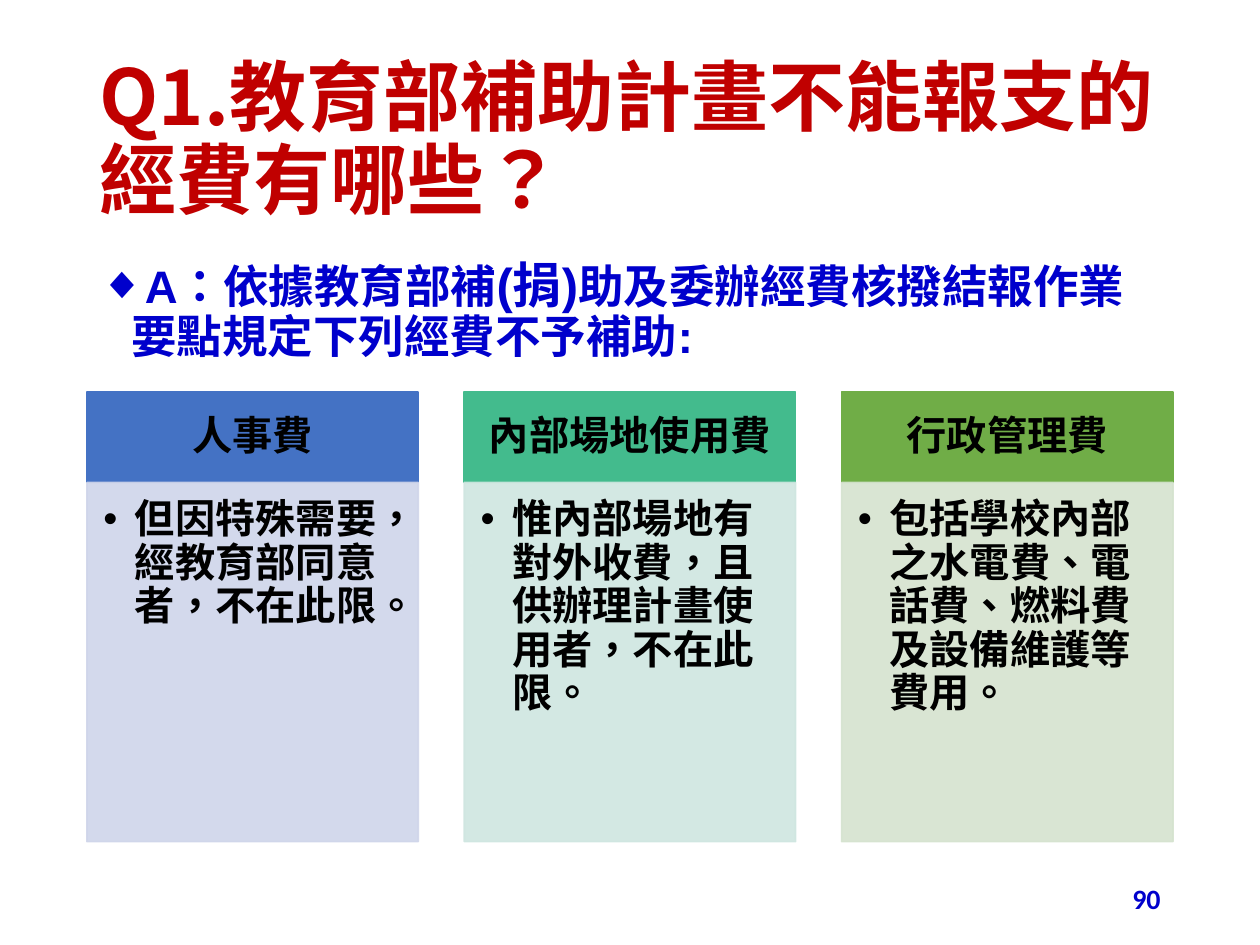
from lxml.etree import SubElement
from pptx import Presentation
from pptx.dml.color import RGBColor
from pptx.enum.lang import MSO_LANGUAGE_ID as Language
from pptx.enum.shapes import MSO_SHAPE as Shape
from pptx.enum.text import MSO_ANCHOR as Anchor, MSO_AUTO_SIZE as AutoSize, PP_ALIGN as Align
from pptx.oxml.ns import qn
from pptx.util import Inches, Pt

CJK_FONT = "Noto Sans CJK SC"
BLUE = "0000CC"
BLACK = "000000"
CARD_LEFT, CARD_WIDTH, CARD_STEP = 0.69, 2.63, 2.995
HEAD_TOP, HEAD_HEIGHT, DETAIL_HEIGHT = 3.11, 0.72, 2.85

CARDS = [
    ("人事費", "但因特殊需要，經教育部同意者，不在此限。", "4472C4", "CFD5EA"),
    ("內部場地使用費", "惟內部場地有對外收費，且供辦理計畫使用者，不在此限。", "43BB8D", "CFE6E0"),
    ("行政管理費", "包括學校內部之水電費、電話費、燃料費及設備維護等費用。", "70AD47", "D5E3CF"),
]


def color(value):
    return RGBColor.from_string(value)


def apply(target, values):
    for name, value in values.items():
        setattr(target, name, value)


def place(shape, left, top, width, height):
    apply(shape, {"left": Inches(left), "top": Inches(top),
                  "width": Inches(width), "height": Inches(height)})


def set_frame(shape, anchor, insets=(0.1, 0.05, 0.1, 0.05)):
    left, top, right, bottom = map(Inches, insets)
    apply(shape.text_frame, {
        "word_wrap": True, "auto_size": AutoSize.NONE, "vertical_anchor": anchor,
        "margin_left": left, "margin_top": top,
        "margin_right": right, "margin_bottom": bottom})


def add_bullet(para, symbol):
    properties = para._p.get_or_add_pPr()
    properties.set("marL", str(Inches(0.25)))
    properties.set("indent", str(-Inches(0.25)))
    SubElement(properties, qn("a:buFont"), typeface="Arial")
    SubElement(properties, qn("a:buChar"), char=symbol)


def write(shape, spans, font, hue, align=Align.LEFT, bullet=None):
    para = shape.text_frame.paragraphs[0]
    if bullet:
        add_bullet(para, bullet)
    apply(para, {"alignment": align, "line_spacing": 0.9, "space_before": Pt(0)})
    for text, size in spans:
        span = para.add_run()
        span.text = text
        apply(span.font, {"name": font, "size": Pt(size), "bold": True,
                          "language_id": Language.TRADITIONAL_CHINESE})
        span.font.color.rgb = color(hue)
        SubElement(span._r.get_or_add_rPr(), qn("a:ea"), typeface=CJK_FONT)


def set_opacity(fill_format, percent):
    for hue in fill_format._xPr.iter(qn("a:srgbClr")):
        SubElement(hue, qn("a:alpha"), val=str(percent * 1000))


def add_panel(page, left, top, height, hue, opacity=100):
    panel = page.shapes.add_shape(Shape.RECTANGLE, Inches(left), Inches(top),
                                  Inches(CARD_WIDTH), Inches(height))
    panel.shadow.inherit = False
    panel.line.width = Pt(1)
    for fill in (panel.fill, panel.line.fill):
        fill.solid()
        fill.fore_color.rgb = color(hue)
    if opacity < 100:
        set_opacity(panel.fill, opacity)
    return panel


def add_card(page, left, heading, detail, strong, pale):
    head = add_panel(page, left, HEAD_TOP, HEAD_HEIGHT, strong)
    set_frame(head, Anchor.MIDDLE, (0.18, 0.1, 0.18, 0.1))
    write(head, [(heading, 23)], CJK_FONT, BLACK, Align.CENTER)
    body = add_panel(page, left, HEAD_TOP + HEAD_HEIGHT, DETAIL_HEIGHT, pale, 90)
    set_frame(body, Anchor.TOP, (0.13, 0.13, 0.18, 0.2))
    write(body, [(detail, 23)], CJK_FONT, BLACK, bullet="•")


def add_title(page):
    title = page.shapes.title
    place(title, 0.69, 0.4, 8.62, 1.45)
    set_frame(title, Anchor.MIDDLE)
    write(title, [("Q1.教育部補助計畫不能報支的經費有哪些？", 44)], CJK_FONT, "C00000")


def add_answer(page):
    answer = page.placeholders[1]
    place(answer, 0.69, 2.02, 8.62, 4.76)
    set_frame(answer, Anchor.TOP)
    spans = [("A：依據教育部補", 26), ("(捐)", 28),
             ("助及委辦經費核撥結報作業要點規定下列經費不予補助:", 26)]
    write(answer, spans, "Arial", BLUE, bullet="◆")


def add_page_number(page):
    box = page.shapes.add_textbox(Inches(7.06), Inches(6.95), Inches(2.25), Inches(0.4))
    set_frame(box, Anchor.MIDDLE)
    write(box, [("90", 16)], "Calibri", BLUE, Align.RIGHT)


def main():
    deck = Presentation()
    apply(deck, {"slide_width": Inches(10), "slide_height": Inches(7.5)})
    page = deck.slides.add_slide(deck.slide_layouts[1])
    add_title(page)
    add_answer(page)
    add_page_number(page)
    for index, card in enumerate(CARDS):
        add_card(page, CARD_LEFT + index * CARD_STEP, *card)
    deck.save("out.pptx")


if __name__ == "__main__":
    main()
